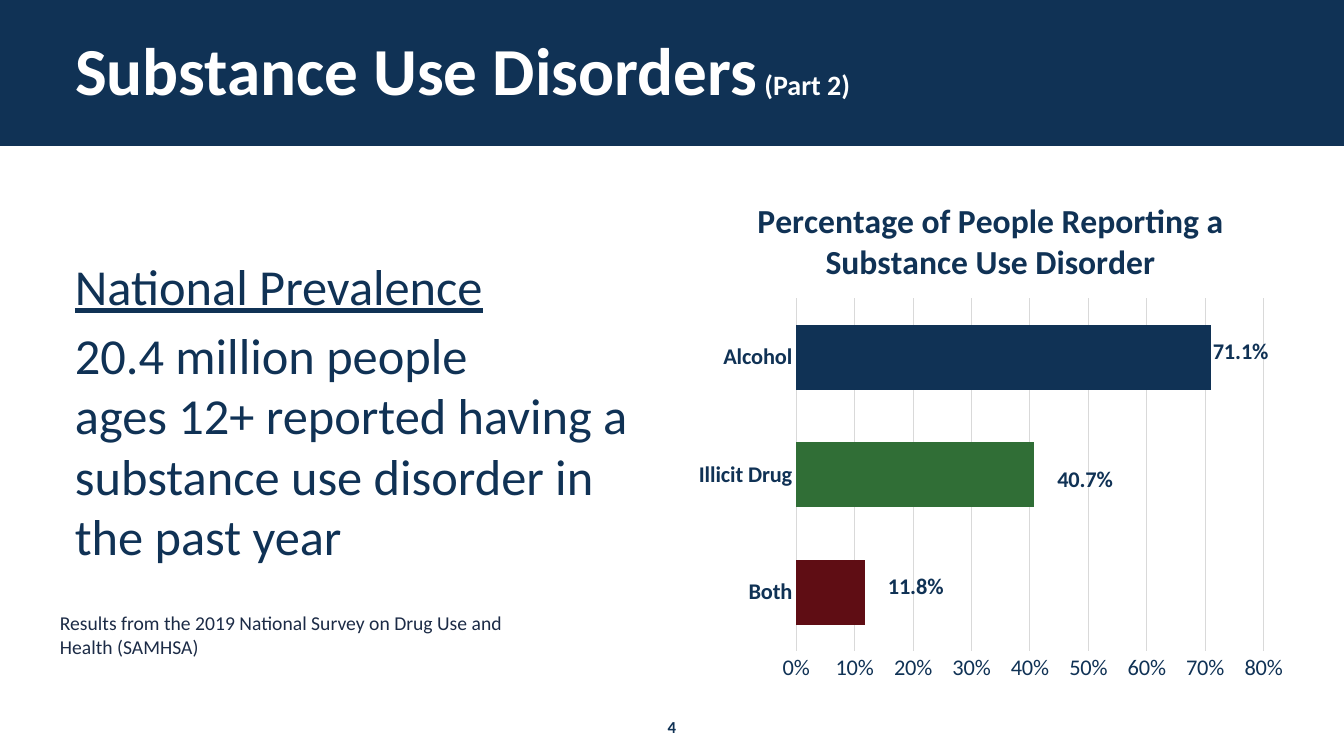
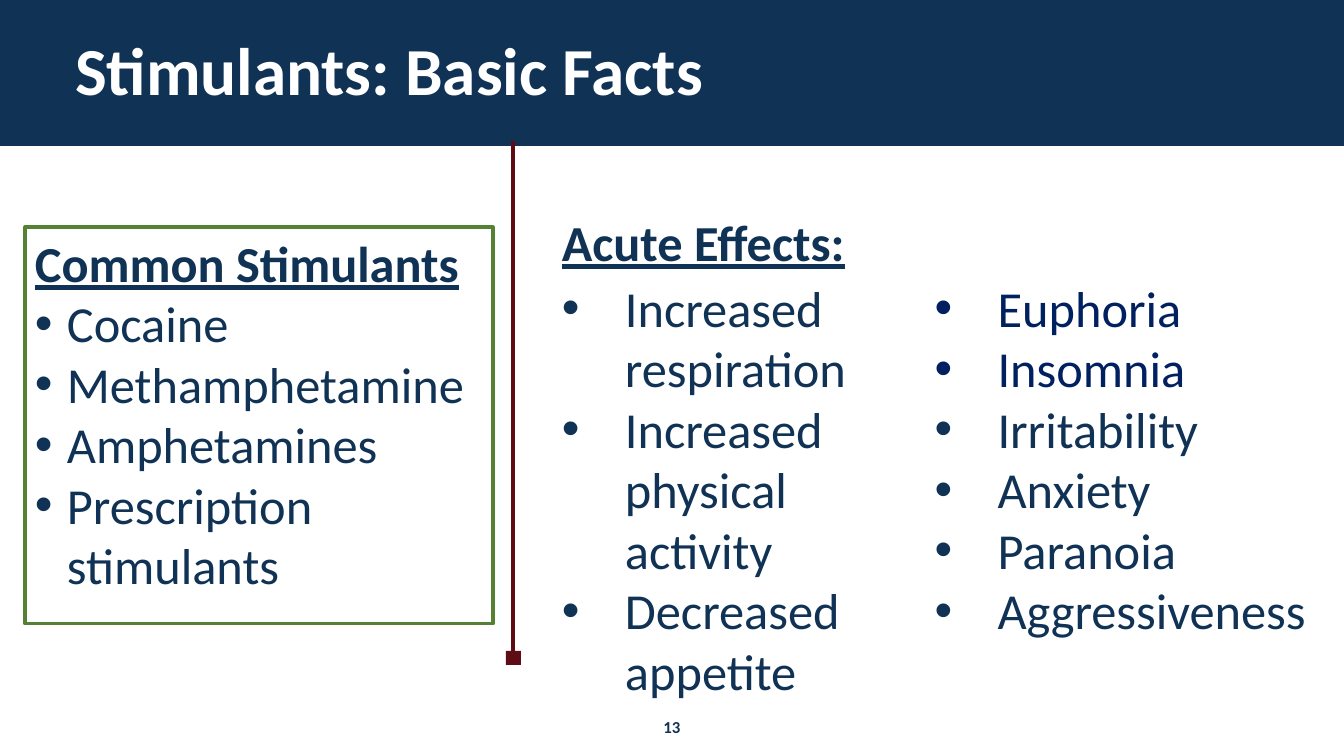
from dataclasses import dataclass

from lxml.etree import SubElement
from pptx import Presentation
from pptx.chart.data import CategoryChartData
from pptx.dml.color import RGBColor
from pptx.enum.chart import XL_CHART_TYPE, XL_TICK_MARK
from pptx.enum.shapes import MSO_CONNECTOR, MSO_SHAPE
from pptx.enum.text import MSO_ANCHOR, PP_ALIGN
from pptx.oxml import parse_xml
from pptx.oxml.ns import nsdecls, qn
from pptx.util import Emu, Pt

FONT = "Calibri"
NAVY, INDIGO, INK = "103255", "002060", "1C2B46"
GREEN, BOX_GREEN, MAROON = "306E36", "548235", "5F0D14"
WHITE, GRID = "FFFFFF", "D9D9D9"


@dataclass
class Line:
    text: str
    size: int = 36
    color: str = NAVY
    bold: bool = False
    underline: bool = False
    indent: int = 0


@dataclass
class Bar:
    label: str
    value: float
    color: str
    label_dx: float
    label_dy: float


BARS = [
    Bar("Both", 0.118, MAROON, 0.14, -0.01),
    Bar("Illicit Drug", 0.407, GREEN, 0.28, 0.01),
    Bar("Alcohol", 0.711, NAVY, 0.39, -0.01),
]
STIMULANTS = ["Cocaine", "Methamphetamine", "Amphetamines", "Prescription stimulants"]
EFFECTS = [
    "Increased respiration", "Increased physical activity", "Decreased appetite",
    "Euphoria", "Insomnia", "Irritability", "Anxiety", "Paranoia", "Aggressiveness",
]
INDIGO_EFFECTS = {"Euphoria", "Insomnia"}


def px(n: int) -> Emu:
    return Emu(round(n * 914400 / 100.8))


def rgb(color: str) -> RGBColor:
    return RGBColor.from_string(color)


def style(font, size: int, color: str, bold: bool = False) -> None:
    font.name, font.size, font.bold = FONT, Pt(size), bold
    font.color.rgb = rgb(color)


def add_bullet(p, indent: int) -> None:
    """Give the paragraph a bullet with a hanging indent."""
    pPr = p._p.get_or_add_pPr()
    pPr.set("marL", str(px(indent)))
    pPr.set("indent", str(-px(indent)))
    SubElement(pPr, qn("a:buFont")).set("typeface", "Arial")
    SubElement(pPr, qn("a:buChar")).set("char", "•")


def write_lines(tf, lines: list[Line], align=PP_ALIGN.LEFT) -> None:
    tf.word_wrap = True
    tf.vertical_anchor = MSO_ANCHOR.TOP
    for i, line in enumerate(lines):
        p = tf.paragraphs[0] if i == 0 else tf.add_paragraph()
        p.text = line.text
        p.alignment = align
        if line.indent:
            add_bullet(p, line.indent)
        for r in p.runs:
            style(r.font, line.size, line.color, line.bold)
            r.font.underline = line.underline


def add_text(s, x: int, y: int, w: int, h: int, lines: list[Line], align=PP_ALIGN.LEFT):
    tf = s.shapes.add_textbox(px(x), px(y), px(w), px(h)).text_frame
    write_lines(tf, lines, align)
    return tf


def add_rect(s, x: int, y: int, w: int, h: int, fill: str = "", line: str = ""):
    sp = s.shapes.add_shape(MSO_SHAPE.RECTANGLE, px(x), px(y), px(w), px(h))
    sp.shadow.inherit = False
    if fill:
        sp.fill.solid()
        sp.fill.fore_color.rgb = rgb(fill)
    else:
        sp.fill.background()
    if line:
        sp.line.color.rgb = rgb(line)
        sp.line.width = Pt(2.25)
    else:
        sp.line.fill.background()
    return sp


def add_base_slide(prs, number: int, title: str, part: str = ""):
    """Add a slide with the title band, title and page number."""
    s = prs.slides.add_slide(prs.slide_layouts[5])
    band = add_rect(s, 0, 0, 1344, 146, NAVY)
    s.shapes._spTree.insert(2, band._element)

    sp = s.shapes.title
    sp.left, sp.top, sp.width, sp.height = px(65), px(40), px(1214), px(68)
    tf = sp.text_frame
    tf.word_wrap = True
    tf.vertical_anchor = MSO_ANCHOR.MIDDLE
    p = tf.paragraphs[0]
    p.text = title
    p.alignment = PP_ALIGN.LEFT
    p.line_spacing = 0.9
    style(p.runs[0].font, 48, WHITE, True)
    if part:
        r = p.add_run()
        r.text = f" {part}"
        style(r.font, 20, WHITE, True)

    add_text(s, 614, 712, 116, 30, [Line(str(number), 12, bold=True)], PP_ALIGN.CENTER)
    return s


def manual_layout(x: float, y: float, extra: str = "", size: str = ""):
    return parse_xml(
        f'<c:layout {nsdecls("c")}><c:manualLayout>{extra}'
        f'<c:x val="{x}"/><c:y val="{y}"/>{size}</c:manualLayout></c:layout>'
    )


def hide_leader_lines(chart) -> None:
    for flag in chart.element.xpath(".//c:showLeaderLines"):
        flag.set("val", "0")
    for labels in chart.element.xpath(".//c:dLbls"):
        labels.append(parse_xml(
            f'<c:extLst {nsdecls("c")}>'
            '<c:ext uri="{CE6537A1-D6FC-4f65-9D91-7224C49458BB}" '
            'xmlns:c15="http://schemas.microsoft.com/office/drawing/2012/chart">'
            '<c15:showLeaderLines val="0"/></c:ext></c:extLst>'
        ))


def add_prevalence_chart(s) -> None:
    data = CategoryChartData(number_format="0.0%")
    data.categories = [bar.label for bar in BARS]
    data.add_series("Series 1", [bar.value for bar in BARS])
    chart = s.shapes.add_chart(
        XL_CHART_TYPE.BAR_STACKED, px(687), px(181), px(607), px(511), data
    ).chart
    style(chart.font, 16, NAVY)
    chart.has_legend = False

    tf = chart.chart_title.text_frame
    tf.text = "Percentage of People Reporting a\nSubstance Use Disorder"
    for p in tf.paragraphs:
        style(p.runs[0].font, 24, NAVY, True)
    chart.chart_title.include_in_layout = False

    cat, val = chart.category_axis, chart.value_axis
    style(cat.tick_labels.font, 16, NAVY, True)
    style(val.tick_labels.font, 16, NAVY)
    for axis in (cat, val):
        axis.major_tick_mark = axis.minor_tick_mark = XL_TICK_MARK.NONE
    val.minimum_scale, val.maximum_scale, val.major_unit = 0, 0.8, 0.1
    val.tick_labels.number_format = "0%"
    val.tick_labels.number_format_is_linked = False
    val.format.line.fill.background()
    val.has_major_gridlines = True
    for line in (cat.format.line, val.major_gridlines.format.line):
        line.color.rgb = rgb(GRID)
        line.width = Pt(0.75)

    plot = chart.plots[0]
    plot.gap_width, plot.overlap, plot.vary_by_categories = 80, 100, False
    series = plot.series[0]
    labels = series.data_labels
    labels.show_value = True
    labels.number_format = "0.0%"
    labels.number_format_is_linked = False
    style(labels.font, 16, NAVY, True)
    for i, bar in enumerate(BARS):
        point = series.points[i]
        point.format.fill.solid()
        point.format.fill.fore_color.rgb = rgb(bar.color)
        style(point.data_label.font, 16, NAVY, True)
    for bar, label in zip(BARS, chart.element.xpath(".//c:dLbl")):
        label.insert(1, manual_layout(bar.label_dx, bar.label_dy))
    hide_leader_lines(chart)

    plot_area = chart.element.xpath(".//c:plotArea")[0]
    for old in plot_area.findall(qn("c:layout")):
        plot_area.remove(old)
    modes = '<c:layoutTarget val="inner"/><c:xMode val="edge"/><c:yMode val="edge"/>'
    plot_area.insert(0, manual_layout(0.18, 0.23, modes, '<c:w val="0.77"/><c:h val="0.69"/>'))


def build_disorders(prs) -> None:
    s = add_base_slide(prs, 4, "Substance Use Disorders", "(Part 2)")
    add_text(s, 65, 250, 744, 58, [Line("National Prevalence", underline=True)])
    add_text(s, 65, 319, 591, 58, [Line(
        "20.4 million people\vages 12+ reported having a "
        "substance use disorder in the past year"
    )])
    add_text(s, 50, 606, 468, 58, [Line(
        "Results from the 2019 National Survey on Drug Use and Health (SAMHSA)", 14, INK
    )])
    add_prevalence_chart(s)


def build_stimulants(prs) -> None:
    s = add_base_slide(prs, 13, "Stimulants: Basic Facts")
    box = add_rect(s, 25, 227, 468, 397, line=BOX_GREEN)
    heading = Line("Common Stimulants", bold=True, underline=True)
    write_lines(box.text_frame, [heading] + [Line(t, indent=32) for t in STIMULANTS])

    add_text(s, 552, 206, 744, 58, [Line("Acute Effects:", bold=True, underline=True)])
    tf = add_text(s, 552, 272, 765, 312, [
        Line(t, color=INDIGO if t in INDIGO_EFFECTS else NAVY, indent=63) for t in EFFECTS
    ])
    tf._txBody.bodyPr.set("numCol", "2")

    divider = s.shapes.add_connector(
        MSO_CONNECTOR.STRAIGHT, px(513), px(141), px(513), px(656)
    )
    divider.line.color.rgb = rgb(MAROON)
    divider.line.width = Pt(2.25)
    SubElement(divider._element.spPr, qn("a:effectLst"))
    add_rect(s, 506, 651, 15, 14, MAROON)


def main() -> None:
    prs = Presentation()
    prs.slide_width, prs.slide_height = px(1344), px(756)
    build_disorders(prs)
    build_stimulants(prs)
    prs.save("out.pptx")


if __name__ == "__main__":
    main()
